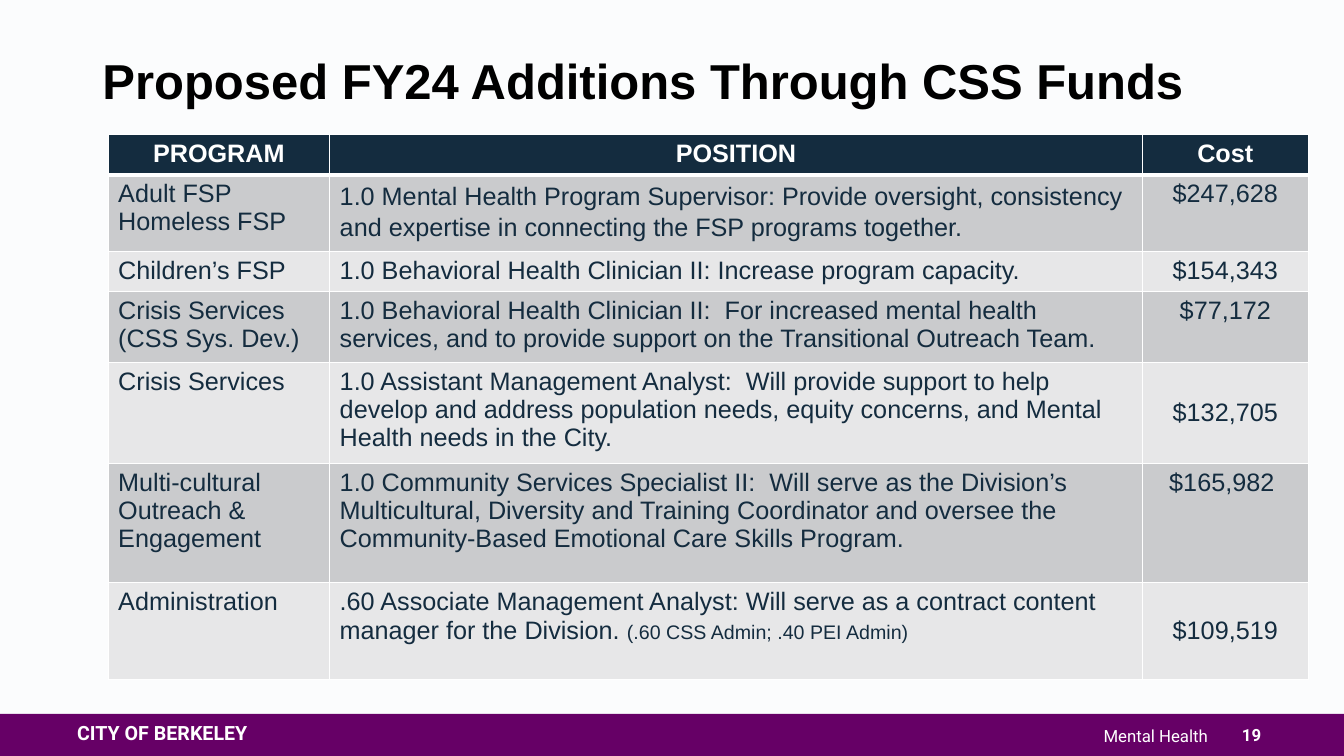
from dataclasses import dataclass

from lxml import etree
from pptx import Presentation
from pptx.dml.color import RGBColor
from pptx.enum.shapes import MSO_SHAPE
from pptx.enum.text import MSO_ANCHOR, MSO_AUTO_SIZE, PP_ALIGN
from pptx.oxml.ns import qn
from pptx.util import Pt

RECTANGLE = MSO_SHAPE.RECTANGLE
TOP, MIDDLE = MSO_ANCHOR.TOP, MSO_ANCHOR.MIDDLE
LEFT, CENTER, RIGHT = PP_ALIGN.LEFT, PP_ALIGN.CENTER, PP_ALIGN.RIGHT
NO_AUTOFIT = MSO_AUTO_SIZE.NONE
EMU_PER_PX = 9525


@dataclass(frozen=True)
class Theme:
    background: str = "FBFCFD"
    purple: str = "660066"
    navy: str = "142C3F"
    white: str = "FFFFFF"
    black: str = "000000"
    bands: tuple = ("CACBCD", "E7E7E8")
    body_font: str = "Arial"
    footer_font: str = "Roboto"
    title_size: int = 35
    table_size: int = 18
    note_size: int = 14
    brand_size: int = 14
    footer_size: int = 12


THEME = Theme()
COLUMN_WIDTHS = (211, 774, 158)
ROW_HEIGHTS = (37, 68, 37, 64, 92, 114, 92)
HEADERS = ("PROGRAM", "POSITION", "Cost")
ADDITIONS = (
    ("Adult FSP\nHomeless FSP",
     "1.0 Mental Health Program Supervisor: Provide oversight, consistency and "
     "expertise in connecting the FSP programs together.", "$247,628"),
    ("Children’s FSP",
     "1.0 Behavioral Health Clinician II: Increase program capacity.", "$154,343"),
    ("Crisis Services\n(CSS Sys. Dev.)",
     "1.0 Behavioral Health Clinician II:  For increased mental health services, "
     "and to provide support on the Transitional Outreach Team.", "$77,172"),
    ("Crisis Services",
     "1.0 Assistant Management Analyst:  Will provide support to help develop and "
     "address population needs, equity concerns, and Mental Health needs in the City.",
     "$132,705"),
    ("Multi-cultural Outreach & Engagement",
     "1.0 Community Services Specialist II:  Will serve as the Division’s "
     "Multicultural, Diversity and Training Coordinator and oversee the "
     "Community-Based Emotional Care Skills Program.", "$165,982 "),
    ("Administration",
     ".60 Associate Management Analyst: Will serve as a contract content manager "
     "for the Division. ", "$109,519"),
)
ADMIN_NOTE = "(.60 CSS Admin; .40 PEI Admin)"
CENTERED_COSTS = ("$132,705", "$109,519")


def px(*lengths):
    return [length * EMU_PER_PX for length in lengths]


def paint(fill, color):
    fill.solid()
    fill.fore_color.rgb = RGBColor.from_string(color)


def format_text(frame, font, size, color, bold=False, align=LEFT, spacing=1.0):
    for para in frame.paragraphs:
        para.alignment = align
        para.line_spacing = spacing
        for span in para.runs:
            span.font.name = font
            span.font.size = Pt(size)
            span.font.bold = bold
            span.font.color.rgb = RGBColor.from_string(color)


def add_title(page, text):
    title = page.shapes.title
    title.left, title.top, title.width, title.height = px(88, 50, 1104, 67)
    frame = title.text_frame
    frame.text = text
    frame.word_wrap = True
    frame.auto_size = NO_AUTOFIT
    frame.vertical_anchor = TOP
    format_text(frame, THEME.body_font, THEME.title_size, THEME.black, True, spacing=0.9)


def add_footer_band(page):
    band = page.shapes.add_shape(RECTANGLE, *px(0, 680, 1280, 40))
    band.shadow.inherit = False
    paint(band.fill, THEME.purple)
    band.line.fill.background()


def add_footer_text(page, bounds, text, size, bold, align, spacing=0.9):
    box = page.shapes.add_textbox(*px(*bounds))
    frame = box.text_frame
    frame.word_wrap = True
    frame.vertical_anchor = MIDDLE
    frame.text = text
    format_text(frame, THEME.footer_font, size, THEME.white, bold, align, spacing)


def set_borders(cell, top, bottom):
    properties = cell._tc.get_or_add_tcPr()
    widths = {"a:lnL": 1, "a:lnR": 1, "a:lnT": top, "a:lnB": bottom}
    for tag, width in widths.items():
        line = etree.SubElement(properties, qn(tag), w=str(Pt(width)))
        fill = etree.SubElement(line, qn("a:solidFill"))
        etree.SubElement(fill, qn("a:srgbClr"), val=THEME.white)


def fill_cell(cell, text, row, column):
    header = row == 0
    set_borders(cell, 3 if row == 1 else 1, 3 if header else 1)
    paint(cell.fill, THEME.navy if header else THEME.bands[(row - 1) % 2])
    cell.vertical_anchor = MIDDLE if text in CENTERED_COSTS else TOP
    cell.text_frame.text = text
    format_text(
        cell.text_frame, THEME.body_font, THEME.table_size,
        THEME.white if header else THEME.navy, header,
        CENTER if header or column == 2 else LEFT,
        1.1 if (row, column) == (1, 1) else 1.0,
    )


def add_note(cell, text):
    span = cell.text_frame.paragraphs[0].add_run()
    span.text = text
    span.font.name = THEME.body_font
    span.font.size = Pt(THEME.note_size)
    span.font.bold = False
    span.font.color.rgb = RGBColor.from_string(THEME.navy)


def add_funding_table(page):
    rows = (HEADERS, *ADDITIONS)
    bounds = px(103, 128, sum(COLUMN_WIDTHS), sum(ROW_HEIGHTS))
    table = page.shapes.add_table(len(rows), len(HEADERS), *bounds).table
    table.horz_banding = False
    for column, width in zip(table.columns, px(*COLUMN_WIDTHS)):
        column.width = width
    for row, height in zip(table.rows, px(*ROW_HEIGHTS)):
        row.height = height
    for row, texts in enumerate(rows):
        for column, text in enumerate(texts):
            fill_cell(table.cell(row, column), text, row, column)
    add_note(table.cell(len(ADDITIONS), 1), ADMIN_NOTE)


def main():
    deck = Presentation()
    deck.slide_width, deck.slide_height = px(1280, 720)
    page = deck.slides.add_slide(deck.slide_layouts[5])
    paint(page.background.fill, THEME.background)
    add_footer_band(page)
    add_footer_text(page, (64, 667, 240, 65), "CITY OF BERKELEY",
                    THEME.brand_size, True, LEFT)
    add_footer_text(page, (560, 669, 600, 65), "Mental Health",
                    THEME.footer_size, False, RIGHT)
    add_footer_text(page, (1160, 680, 64, 40), "19",
                    THEME.footer_size, True, CENTER, 1.0)
    add_title(page, "Proposed FY24 Additions Through CSS Funds")
    add_funding_table(page)
    deck.save("out.pptx")


if __name__ == "__main__":
    main()
